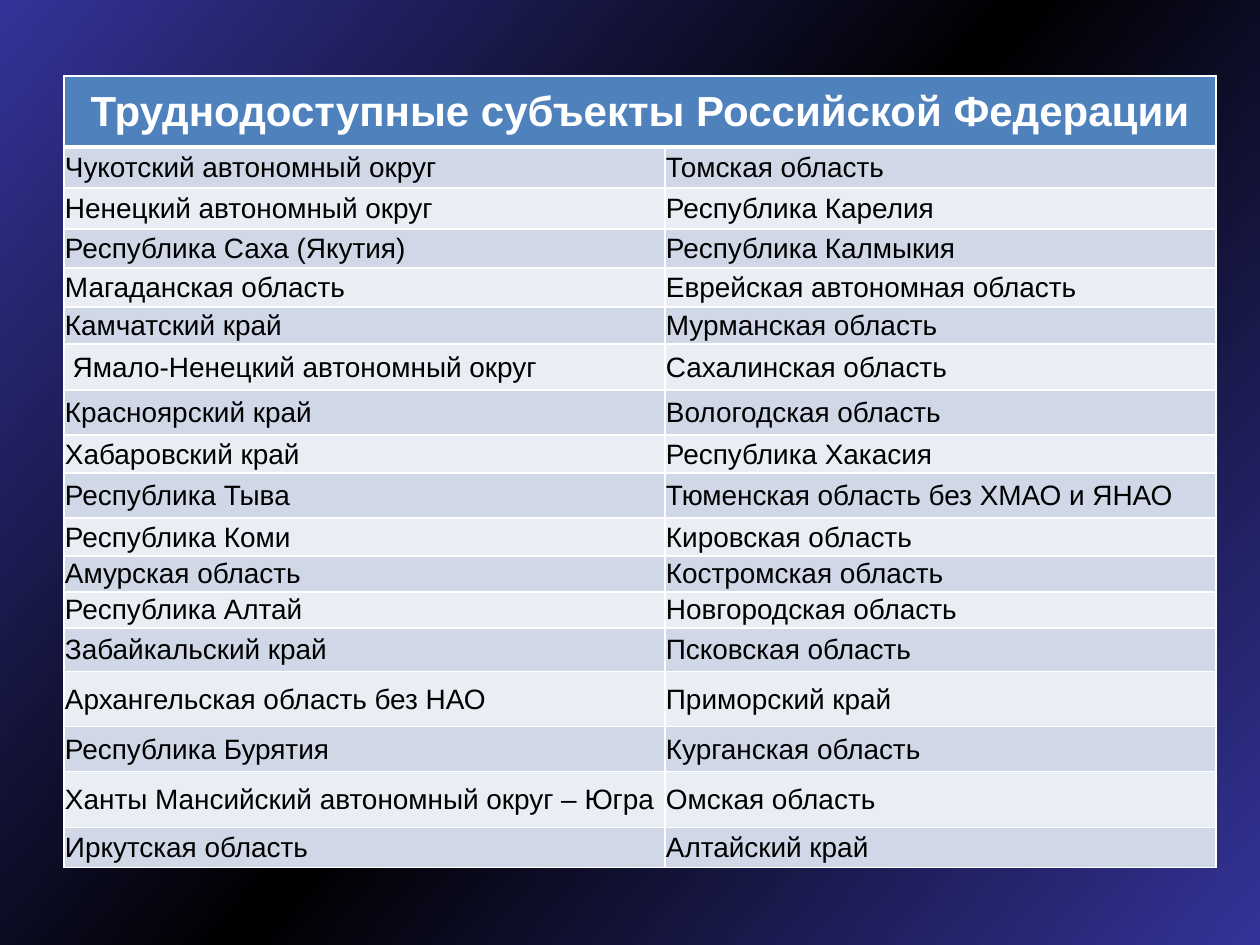
from copy import deepcopy

from lxml.etree import SubElement
from pptx import Presentation
from pptx.dml.color import RGBColor
from pptx.enum.text import MSO_ANCHOR, PP_ALIGN
from pptx.oxml.ns import qn
from pptx.util import Pt

PX = 914400 // 126  # EMU in one px
FONT = "Arial"
COLORS = {
    "edge": "333399",
    "middle": "000000",
    "header": "4F81BD",
    "odd": "D0D8E8",
    "even": "E9EDF4",
    "border": "FFFFFF",
    "header_text": "FFFFFF",
    "text": "000000",
}
TITLE = "Труднодоступные субъекты Российской Федерации"
REGIONS = [
    ("Чукотский автономный округ", "Томская область"),
    ("Ненецкий автономный округ", "Республика Карелия"),
    ("Республика Саха (Якутия)", "Республика Калмыкия"),
    ("Магаданская область", "Еврейская автономная область"),
    ("Камчатский край", "Мурманская область"),
    (" Ямало-Ненецкий автономный округ", "Сахалинская область"),
    ("Красноярский край", "Вологодская область"),
    ("Хабаровский край", "Республика Хакасия"),
    ("Республика Тыва", "Тюменская область без ХМАО и ЯНАО"),
    ("Республика Коми", "Кировская область"),
    ("Амурская область", "Костромская область"),
    ("Республика Алтай", "Новгородская область"),
    ("Забайкальский край", "Псковская область"),
    ("Архангельская область без НАО", "Приморский край"),
    ("Республика Бурятия", "Курганская область"),
    ("Ханты Мансийский автономный округ – Югра", "Омская область"),
    ("Иркутская область", "Алтайский край"),
]
COLUMN_WIDTHS = [601, 551]
ROW_HEIGHTS = [71, 41, 41, 39, 39, 37, 46, 45, 38, 45, 38, 36, 36, 44, 55, 45, 56, 40]


def color(name):
    return RGBColor.from_string(COLORS[name])


def paint_background(page):
    fill = page.background.fill
    fill.gradient()
    fill.gradient_angle = 320  # counter-clockwise, so 40 degrees clockwise
    # A third stop for the dark band in the middle
    stops = page.element.find(".//" + qn("a:gsLst"))
    stops.append(deepcopy(stops[-1]))
    for stop, position, name in zip(
        fill.gradient_stops, (0, 0.5, 1), ("edge", "middle", "edge")
    ):
        stop.position = position
        stop.color.rgb = color(name)


def set_borders(cell, bottom):
    properties = cell._tc.get_or_add_tcPr()
    widths = {"a:lnL": 1, "a:lnR": 1, "a:lnT": 1, "a:lnB": bottom}
    for index, (tag, width) in enumerate(widths.items()):
        line = SubElement(properties, qn(tag), w=str(Pt(width)))
        solid = SubElement(line, qn("a:solidFill"))
        SubElement(solid, qn("a:srgbClr"), val=COLORS["border"])
        properties.insert(index, line)  # borders come before the fill


def format_cell(cell, fill, bottom=1):
    cell.fill.solid()
    cell.fill.fore_color.rgb = color(fill)
    cell.vertical_anchor = MSO_ANCHOR.MIDDLE
    cell.margin_left = cell.margin_right = cell.margin_top = PX
    cell.margin_bottom = 0
    set_borders(cell, bottom)


def write(cell, text, size, ink, bold=False, align=PP_ALIGN.LEFT):
    para = cell.text_frame.paragraphs[0]
    para.alignment = align
    span = para.add_run()
    span.text = text
    span.font.name = FONT
    span.font.size = Pt(size)
    span.font.bold = bold
    span.font.color.rgb = color(ink)


def add_region_table(page, left, top):
    box = [left, top, sum(COLUMN_WIDTHS), sum(ROW_HEIGHTS)]
    table = page.shapes.add_table(
        len(ROW_HEIGHTS), len(COLUMN_WIDTHS), *(side * PX for side in box)
    ).table
    for column, width in zip(table.columns, COLUMN_WIDTHS):
        column.width = width * PX
    for row, height in zip(table.rows, ROW_HEIGHTS):
        row.height = height * PX

    # Header across both columns
    for cell in table.rows[0].cells:
        format_cell(cell, "header", bottom=3)
    header = table.cell(0, 0)
    header.merge(table.cell(0, 1))
    write(header, TITLE, 24, "header_text", bold=True, align=PP_ALIGN.CENTER)

    # Banded rows of regions
    for row, names in enumerate(REGIONS, start=1):
        for column, name in enumerate(names):
            cell = table.cell(row, column)
            format_cell(cell, "odd" if row % 2 else "even")
            write(cell, name, 16, "text")


def main():
    deck = Presentation()
    deck.slide_width = 1260 * PX
    deck.slide_height = 945 * PX
    page = deck.slides.add_slide(deck.slide_layouts[6])
    paint_background(page)
    add_region_table(page, 64, 76)
    deck.save("out.pptx")


if __name__ == "__main__":
    main()
